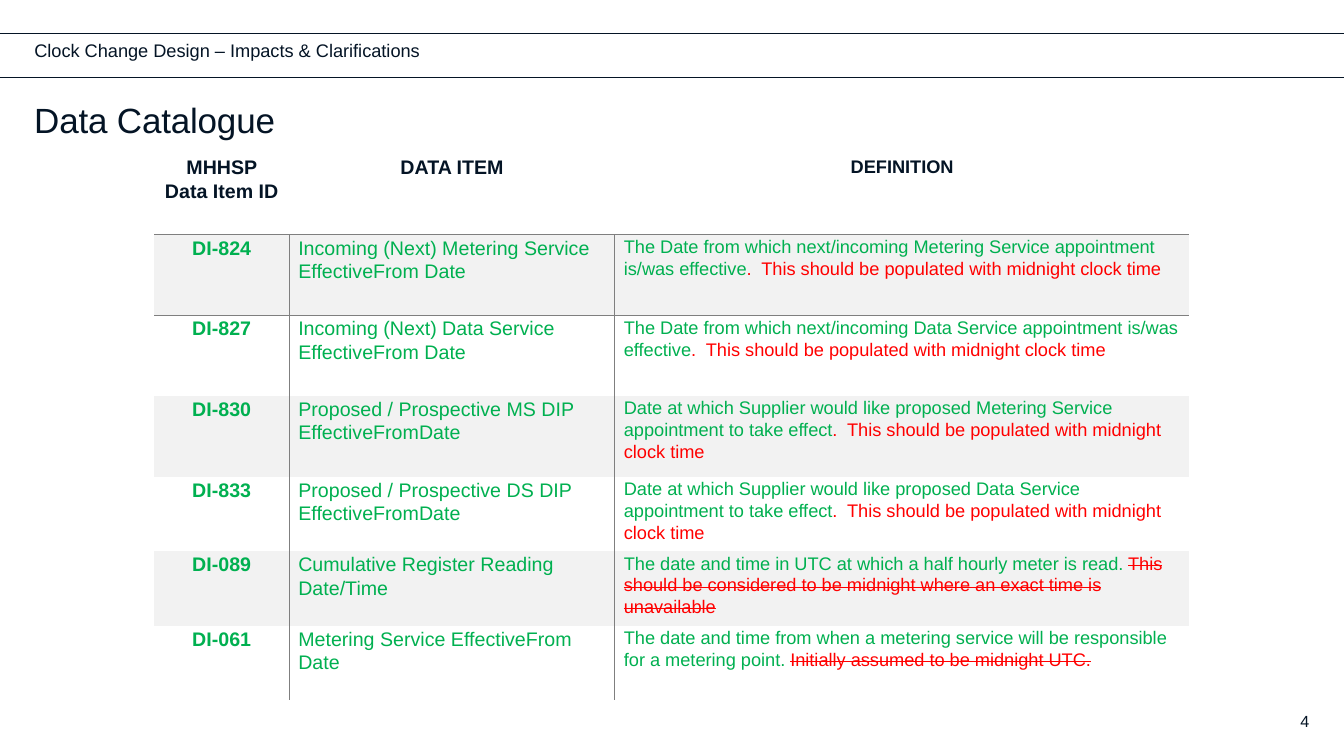
from dataclasses import dataclass

import pptx
import pptx.dml.color
import pptx.enum.shapes
import pptx.enum.text
import pptx.oxml
import pptx.oxml.ns
import pptx.util
from lxml import etree

ALIGN = pptx.enum.text.PP_ALIGN
ANCHOR = pptx.enum.text.MSO_ANCHOR
GRID_COLS = 40
PLAIN = "{2D5ABB26-0587-4C30-8999-92F81FD0307C}"


@dataclass(frozen=True)
class Theme:
    font: str = "Arial"
    ink: str = "041425"
    green: str = "00B050"
    red: str = "FF0000"
    band: str = "F2F2F2"
    rule: str = "7F7F7F"
    title: float = 25
    label: float = 14
    body: float = 13
    small: float = 11.5


THEME = Theme()
WIDTH = pptx.util.Inches(40 / 3)
HEIGHT = pptx.util.Inches(7.5)

HEADS = [("MHHSP Data Item ID", THEME.label), ("DATA ITEM", THEME.label),
         ("DEFINITION", THEME.body)]
COLS = [4.02, 9.69, 17.1]
ROWS = [2.4] * 4 + [2.22] * 3
CLOCK = ".  This should be populated with midnight clock time"
ITEMS = [
    ("DI-824", "Incoming (Next) Metering Service EffectiveFrom Date",
     "The Date from which next/incoming Metering Service appointment is/was effective",
     CLOCK, False),
    ("DI-827", "Incoming (Next) Data Service EffectiveFrom Date",
     "The Date from which next/incoming Data Service appointment is/was effective",
     CLOCK, False),
    ("DI-830", "Proposed / Prospective MS DIP EffectiveFromDate",
     "Date at which Supplier would like proposed Metering Service appointment to take effect",
     CLOCK, False),
    ("DI-833", "Proposed / Prospective DS DIP EffectiveFromDate",
     "Date at which Supplier would like proposed Data Service appointment to take effect",
     CLOCK, False),
    ("DI-089", "Cumulative Register Reading Date/Time",
     "The date and time in UTC at which a half hourly meter is read. ",
     "This should be considered to be midnight where an exact time is unavailable", True),
    ("DI-061", "Metering Service EffectiveFrom Date",
     "The date and time from when a metering service will be responsible for a metering point. ",
     "Initially assumed to be midnight UTC.", True),
]


def unit(count):
    return round(WIDTH * count / GRID_COLS)


def tint(code):
    return pptx.dml.color.RGBColor.from_string(code)


def write(para, text, size=THEME.body, color=THEME.ink, bold=False, strike=False, track=0):
    run = para.add_run()
    run.text = text
    run.font.name = THEME.font
    run.font.size = pptx.util.Pt(size)
    run.font.bold = bold
    run.font.color.rgb = tint(color)
    props = run._r.get_or_add_rPr()
    if strike:
        props.set("strike", "sngStrike")
    if track:
        props.set("spc", str(track))


def add_label(slide, text, place, align=ALIGN.LEFT, anchor=ANCHOR.MIDDLE, lead=0.9, **form):
    frame = slide.shapes.add_textbox(*map(unit, place)).text_frame
    frame.word_wrap = True
    frame.vertical_anchor = anchor
    frame.margin_left = frame.margin_right = frame.margin_top = frame.margin_bottom = 0
    para = frame.paragraphs[0]
    para.alignment = align
    para.line_spacing = lead
    write(para, text, **form)


def add_rule(slide, row):
    line = slide.shapes.add_connector(
        pptx.enum.shapes.MSO_CONNECTOR.STRAIGHT, 0, unit(row), WIDTH, unit(row))
    line.line.color.rgb = tint(THEME.ink)
    line.line.width = pptx.util.Pt(0.5)
    etree.SubElement(line._element.spPr, pptx.oxml.ns.qn("a:effectLst"))


def add_edge(cell, side):
    space = pptx.oxml.ns.nsdecls("a")
    cell._tc.get_or_add_tcPr().append(pptx.oxml.parse_xml(
        f'<a:ln{side} {space} w="12700"><a:solidFill>'
        f'<a:srgbClr val="{THEME.rule}"/></a:solidFill></a:ln{side}>'))


def fill_cell(cell, parts, align=ALIGN.LEFT, edges="", band=False):
    cell.margin_left = cell.margin_right = pptx.util.Inches(0.09)
    cell.margin_top = pptx.util.Inches(0.01)
    cell.margin_bottom = 0
    for side in edges:
        add_edge(cell, side)
    if band:
        cell.fill.solid()
        cell.fill.fore_color.rgb = tint(THEME.band)
    else:
        cell.fill.background()
    para = cell.text_frame.paragraphs[0]
    para.alignment = align
    para.line_spacing = 1.07
    para.space_after = pptx.util.Pt(8)
    for text, form in parts:
        write(para, text, **form)


def add_items(slide):
    place = map(unit, (4.59, 4.59, sum(COLS), sum(ROWS)))
    table = slide.shapes.add_table(len(ROWS), len(COLS), *place).table
    table.first_row = table.horz_banding = False
    table._tbl.tblPr.find(pptx.oxml.ns.qn("a:tableStyleId")).text = PLAIN
    for col, width in zip(table.columns, COLS):
        col.width = unit(width)
    for row, height in zip(table.rows, ROWS):
        row.height = unit(height)
    for col, (text, size) in enumerate(HEADS):
        fill_cell(table.cell(0, col), [(text, dict(size=size, bold=True))],
                  align=ALIGN.CENTER, edges="B")
    name = dict(size=THEME.label, color=THEME.green)
    for row, (code, item, kept, change, struck) in enumerate(ITEMS, 1):
        band = row % 2 == 1
        top = "T" if row == 1 else ""
        fill_cell(table.cell(row, 0), [(code, dict(name, bold=True))],
                  align=ALIGN.CENTER, edges="R" + top, band=band)
        fill_cell(table.cell(row, 1), [(item, name)], edges="L" + top, band=band)
        fill_cell(table.cell(row, 2),
                  [(kept, dict(color=THEME.green)),
                   (change, dict(color=THEME.red, strike=struck))],
                  edges=top, band=band)


def main():
    deck = pptx.Presentation()
    deck.slide_width, deck.slide_height = WIDTH, HEIGHT
    slide = deck.slides.add_slide(deck.slide_layouts[6])
    for row in (1, 2.31):
        add_rule(slide, row)
    add_label(slide, "Clock Change Design – Impacts & Clarifications", (1.02, 1.08, 15.8, 0.9))
    add_label(slide, "Data Catalogue", (1.02, 3.06, 37.98, 1.17), anchor=ANCHOR.TOP,
              size=THEME.title, track=-10)
    add_items(slide)
    add_label(slide, "4", (29.97, 20.85, 9, 1.2), align=ALIGN.RIGHT, lead=1, size=THEME.small)
    deck.save("out.pptx")


if __name__ == "__main__":
    main()
